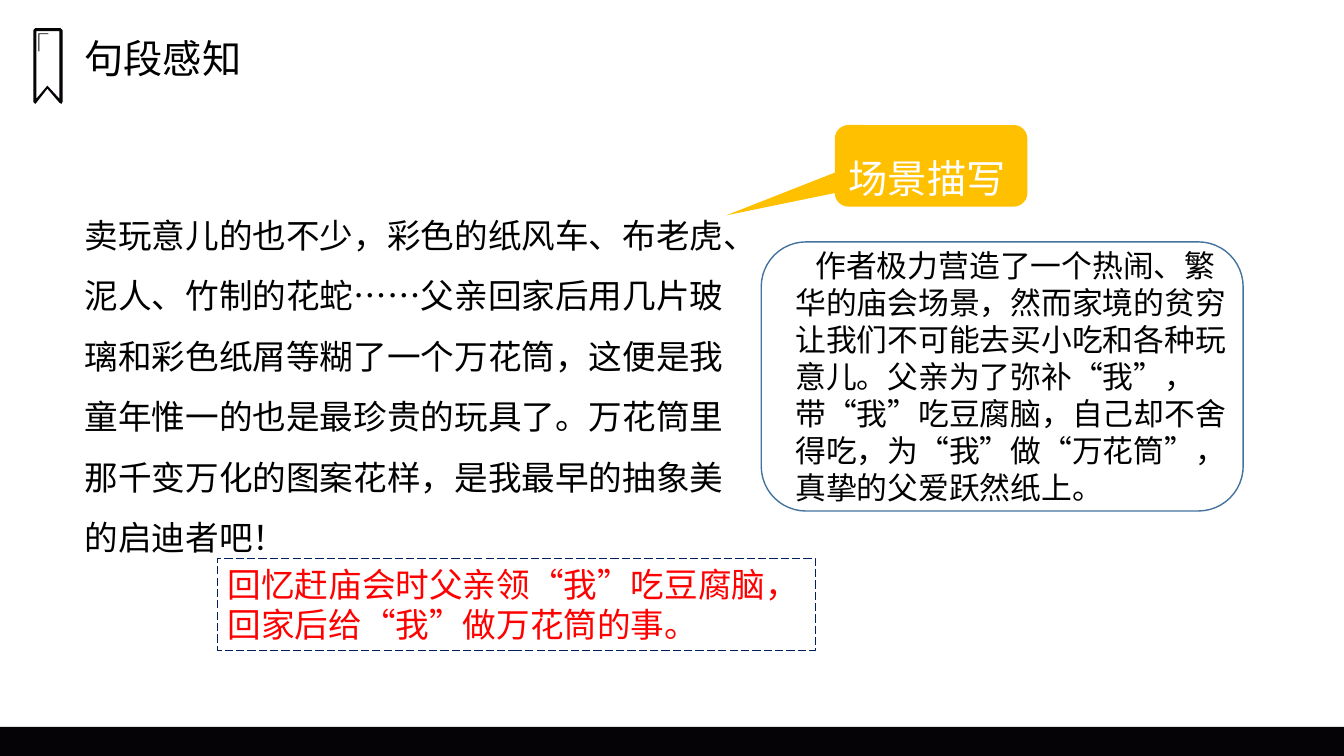
from lxml import etree
from pptx import Presentation
from pptx.dml.color import RGBColor
from pptx.enum.dml import MSO_LINE
from pptx.enum.lang import MSO_LANGUAGE_ID as LANG
from pptx.enum.shapes import MSO_SHAPE
from pptx.enum.text import MSO_ANCHOR, MSO_AUTO_SIZE, PP_ALIGN
from pptx.oxml.ns import qn
from pptx.util import Inches, Pt

BLACK = RGBColor(0x00, 0x00, 0x00)
WHITE = RGBColor(0xFF, 0xFF, 0xFF)
INK = RGBColor(0x05, 0x03, 0x05)
AMBER = RGBColor(0xFF, 0xC0, 0x00)
STEEL = RGBColor(0x43, 0x73, 0x9E)
NAVY = RGBColor(0x00, 0x20, 0x60)
RED = RGBColor(0xFF, 0x00, 0x00)


class SlideKit:
    font = "Arial"

    def __init__(self, slide):
        self.s = slide

    def set_text(self, sp, text, size, color=BLACK, spacing=1.0, indent=0, wrap=True,
                 anchor=MSO_ANCHOR.TOP):
        tf = sp.text_frame
        tf.text = text
        tf.word_wrap = wrap
        tf.auto_size = MSO_AUTO_SIZE.NONE
        tf.vertical_anchor = anchor
        p = tf.paragraphs[0]
        p.alignment = PP_ALIGN.LEFT
        p.line_spacing = spacing
        p.space_before = Pt(0)
        p.font.name = self.font
        p.font.size = Pt(size)
        p.font.color.rgb = color
        p.font.language_id = LANG.SIMPLIFIED_CHINESE
        pPr = p._p.get_or_add_pPr()
        pPr.set("marL", "0")
        pPr.set("indent", str(Inches(indent)))
        pPr.find(qn("a:defRPr")).addprevious(etree.Element(qn("a:buNone")))

    def placeholder(self, idx, box, text, size, **style):
        sp = self.s.placeholders[idx]
        sp.left, sp.top, sp.width, sp.height = map(Inches, box)
        self.set_text(sp, text, size, **style)

    def textbox(self, box, text, size, parent=None, **style):
        sp = (parent or self.s).shapes.add_textbox(*map(Inches, box))
        self.set_text(sp, text, size, **style)

    def paint(self, sp, fill=None, line=None, width=1, dash=None):
        sp.shadow.inherit = False
        if fill is None:
            sp.fill.background()
        else:
            sp.fill.solid()
            sp.fill.fore_color.rgb = fill
        if line is None:
            sp.line.fill.background()
        else:
            sp.line.color.rgb = line
            sp.line.width = Pt(width)
            sp.line.dash_style = dash

    def shape(self, kind, box, parent=None, adjust=(), **look):
        sp = (parent or self.s).shapes.add_shape(kind, *map(Inches, box))
        for i, value in enumerate(adjust):
            sp.adjustments[i] = value
        self.paint(sp, **look)
        return sp

    def outline(self, contours, fill):
        fb = None
        for contour in contours:
            start, *rest = [(Inches(x), Inches(y)) for x, y in contour]
            if fb is None:
                fb = self.s.shapes.build_freeform(*start)
            else:
                fb.move_to(*start)
            fb.add_line_segments(rest, close=True)
        self.paint(fb.convert_to_shape(), fill=fill)


def main():
    prs = Presentation()
    prs.slide_width, prs.slide_height = Inches(13.33), Inches(7.5)
    s = prs.slides.add_slide(prs.slide_layouts[1])
    kit = SlideKit(s)

    # Footer bar and bookmark
    kit.shape(MSO_SHAPE.RECTANGLE, (0, 7.21, 13.33, 0.29), fill=INK)
    kit.outline([
        [(0.35, 0.28), (0.33, 0.3), (0.33, 1.01), (0.35, 1.03), (0.36, 1.02), (0.47, 0.88),
         (0.59, 1.02), (0.61, 1.03), (0.62, 1.01), (0.62, 0.3), (0.6, 0.28)],
        [(0.36, 0.31), (0.59, 0.31), (0.59, 0.98), (0.47, 0.85), (0.36, 0.98)],
        [(0.38, 0.33), (0.38, 0.51), (0.39, 0.51), (0.39, 0.34), (0.48, 0.34), (0.48, 0.33)],
    ], INK)

    # Title and quoted passage
    kit.placeholder(0, (0.74, 0.29, 1.77, 0.57), "句段感知", 28, wrap=False)
    kit.placeholder(
        1, (0.74, 1.88, 6.84, 3.74),
        "卖玩意儿的也不少，彩色的纸风车、布老虎、泥人、竹制的花蛇……父亲回家后用几片玻璃和彩色纸屑等"
        "糊了一个万花筒，这便是我童年惟一的也是最珍贵的玩具了。万花筒里那千变万化的图案花样，"
        "是我最早的抽象美的启迪者吧！", 24, spacing=1.5)

    # Callout
    callout = kit.shape(MSO_SHAPE.ROUNDED_RECTANGULAR_CALLOUT, (8.28, 1.24, 1.91, 0.81),
                        adjust=(-1.065, 0.607, 0.167), fill=AMBER)
    kit.set_text(callout, "场景描写", 28, color=WHITE, spacing=1.5, anchor=MSO_ANCHOR.MIDDLE)

    # Commentary in a rounded frame
    comment = s.shapes.add_group_shape()
    kit.shape(MSO_SHAPE.ROUNDED_RECTANGLE, (7.55, 2.4, 4.78, 2.67), parent=comment, line=STEEL)
    kit.textbox(
        (7.79, 2.4, 4.54, 2.69),
        "作者极力营造了一个热闹、繁华的庙会场景，然而家境的贫穷让我们不可能去买小吃和各种玩意儿。"
        "父亲为了弥补“我”，带“我”吃豆腐脑，自己却不舍得吃，为“我”做“万花筒”，真挚的父爱跃然纸上。",
        22, parent=comment, indent=0.2)

    # Summary in a dashed frame
    summary = kit.shape(MSO_SHAPE.RECTANGLE, (2.16, 5.54, 5.93, 0.91),
                        line=NAVY, width=0.75, dash=MSO_LINE.LONG_DASH)
    kit.set_text(summary, "回忆赶庙会时父亲领“我”吃豆腐脑，回家后给“我”做万花筒的事。", 24, color=RED)

    prs.save("out.pptx")


if __name__ == "__main__":
    main()
